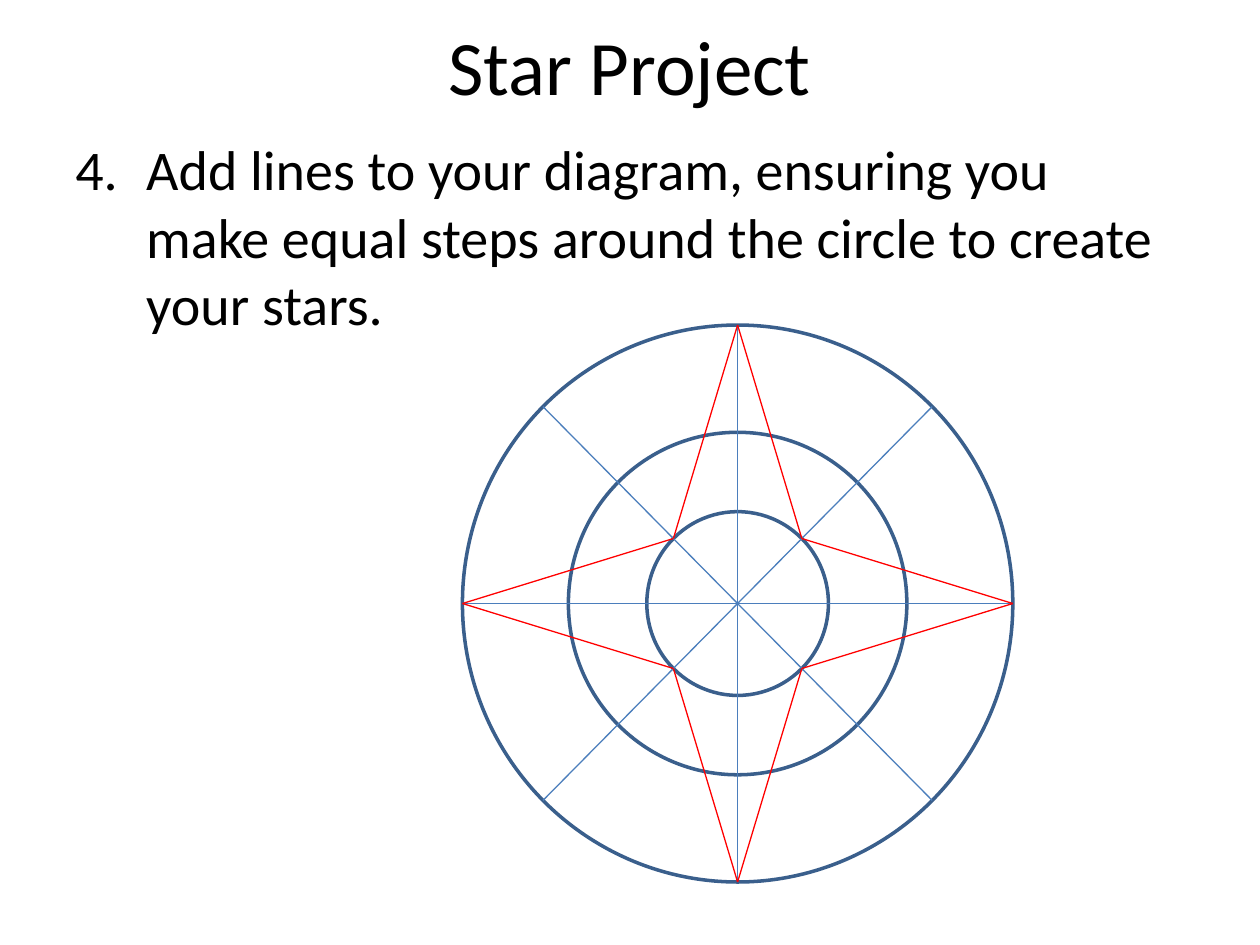
from dataclasses import dataclass
from math import cos, pi, sin

from lxml.etree import SubElement
from pptx import Presentation
from pptx.dml.color import RGBColor as RGB
from pptx.enum.shapes import MSO_CONNECTOR as LINK, MSO_SHAPE as SHAPE
from pptx.enum.text import MSO_ANCHOR as ANCHOR, PP_ALIGN as ALIGN
from pptx.oxml.ns import qn
from pptx.util import Pt


@dataclass(frozen=True)
class Theme:
    """Colours, font and sizes of the slide."""
    ink: RGB = RGB(0, 0, 0)
    ring: RGB = RGB(0x3A, 0x5F, 0x8C)
    guide: RGB = RGB(0x4B, 0x7E, 0xBC)
    star: RGB = RGB(0xFF, 0, 0)
    font: str = "Calibri"
    title: float = 44
    body: float = 32
    thick: float = 2
    thin: float = 0.75


THEME = Theme()


def add_text(slide, box, text, size, anchor, align):
    """Place one paragraph in a box and return it."""
    frame = slide.shapes.add_textbox(*map(Pt, box)).text_frame
    frame.word_wrap = True
    frame.vertical_anchor = anchor
    para = frame.paragraphs[0]
    para.alignment = align
    run = para.add_run()
    run.text = text
    for name, value in {"name": THEME.font, "size": Pt(size)}.items():
        setattr(run.font, name, value)
    run.font.color.rgb = THEME.ink
    return para


def add_step(slide, box, text, number, indent):
    """Place a numbered step with a hanging indent."""
    para = add_text(slide, box, text, THEME.body, ANCHOR.TOP, ALIGN.LEFT)
    para.space_before = Pt(THEME.body * 0.2)
    props = para._p.get_or_add_pPr()
    for name, value in {"marL": Pt(indent), "indent": -Pt(indent)}.items():
        props.set(name, str(value))
    SubElement(props, qn("a:buFont"), typeface="+mj-lt")
    SubElement(props, qn("a:buAutoNum"), type="arabicPeriod", startAt=str(number))


def add_ring(slide, box, scale):
    """Draw an unfilled ring centred in a box."""
    left, top, width, height = box
    wide, high = width * scale, height * scale
    place = (left + (width - wide) / 2, top + (height - high) / 2, wide, high)
    ring = slide.shapes.add_shape(SHAPE.OVAL, *map(Pt, place))
    ring.shadow.inherit = False
    ring.fill.background()
    ring.line.color.rgb = THEME.ring
    ring.line.width = Pt(THEME.thick)


def add_line(slide, start, end, color):
    """Draw a thin line between two points."""
    line = slide.shapes.add_connector(LINK.STRAIGHT, *map(Pt, start + end))
    line.line.color.rgb = color
    line.line.width = Pt(THEME.thin)
    SubElement(line._element.spPr, qn("a:effectLst"))


def add_star(slide, box, scales, points):
    """Draw rings, spokes and a star within a box."""
    left, top, width, height = box
    count = 2 * points

    def spot(step, scale):
        """Return the point at a step around a ring."""
        angle = 2 * pi * step / count
        return (left + width / 2 * (1 + scale * sin(angle)),
                top + height / 2 * (1 - scale * cos(angle)))

    for scale in scales:
        add_ring(slide, box, scale)
    for step in (0, 2, 1, 3):
        add_line(slide, spot(step, 1), spot(step + points, 1), THEME.guide)
    tips = [spot(step, scales[0] if step % 2 else 1) for step in range(count)]
    for start, end in zip(tips, tips[1:] + tips[:1]):
        add_line(slide, start, end, THEME.star)


def main():
    """Build and save the slide."""
    deck = Presentation()
    deck.slide_width, deck.slide_height = Pt(720), Pt(540)
    slide = deck.slides.add_slide(deck.slide_layouts[6])
    add_text(slide, (36, 0, 648, 73.5), "Star Project",
             THEME.title, ANCHOR.MIDDLE, ALIGN.CENTER)
    add_step(slide, (36, 73.5, 648, 409),
             "Add lines to your diagram, ensuring you make equal steps "
             "around the circle to create your stars.", 4, 40.5)
    add_star(slide, (264.25, 185.75, 314.5, 318.25), (0.33, 0.615, 1), 4)
    deck.save("out.pptx")


if __name__ == "__main__":
    main()
